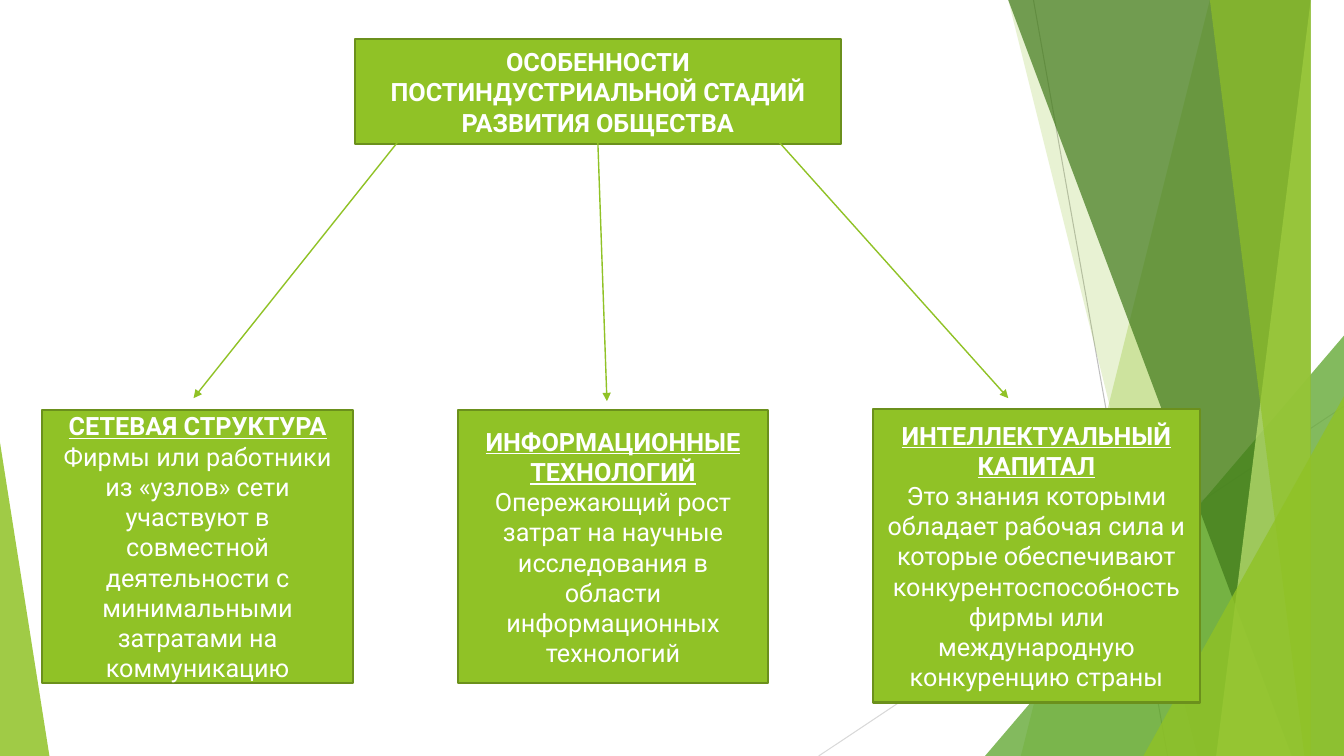
from lxml.etree import SubElement as sub_el
from pptx import Presentation
from pptx.dml.color import RGBColor as Rgb
from pptx.enum.shapes import MSO_CONNECTOR as Conn, MSO_SHAPE as Kind
from pptx.enum.text import MSO_ANCHOR as Anchor, MSO_AUTO_SIZE as Fit, PP_ALIGN as Align
from pptx.oxml.ns import qn
from pptx.util import Inches, Pt

WIDE, HIGH = 13.33, 7.5
GREEN, EDGE, WHITE = "90C226", "6B901C", "FFFFFF"
FONT = "Roboto"

HEAD = "ОСОБЕННОСТИ ПОСТИНДУСТРИАЛЬНОЙ СТАДИЙ РАЗВИТИЯ ОБЩЕСТВА"
HEAD_BOX = (3.52, 0.39, 4.82, 1.04)

# Cards: left edges follow one step
LEFT, STEP = 0.42, 4.12
CARDS = [  # title, text, top, width, height
    ("СЕТЕВАЯ СТРУКТУРА",
     "Фирмы или работники из «узлов» сети участвуют в совместной "
     "деятельности с минимальными затратами на коммуникацию",
     4.07, 3.08, 2.71),
    ("ИНФОРМАЦИОННЫЕ ТЕХНОЛОГИЙ",
     "Опережающий рост затрат на научные исследования в области "
     "информационных технологий",
     4.07, 3.08, 2.71),
    ("ИНТЕЛЛЕКТУАЛЬНЫЙ КАПИТАЛ",
     "Это знания которыми обладает рабочая сила и которые обеспечивают "
     "конкурентоспособность фирмы или международную конкуренцию страны",
     4.06, 3.24, 2.91),
]
ARROWS = [
    ((4.04, 1.29), (1.92, 3.95)),
    ((5.93, 1.42), (6.02, 3.98)),
    ((7.62, 1.29), (10, 3.95)),
]

# Facets: bands are (top x, bottom x) and run to the right edge;
# wedges are (left, top, width, peak)
THREADS = [
    ((10.25, 0), (11.58, HIGH), "BFBFBF"),
    ((WIDE, 4.03), (8.12, HIGH), "D9D9D9"),
]
FACETS = [
    ("band", (12.28, 10.04), GREEN, 30),
    ("band", (10.5, 11.83), GREEN, 20),
    ("wedge", (9.77, 3.33, 3.56, 1), "54A021", 72),
    ("band", (10.21, 12.91), "3F7819", 70),
    ("band", (13.03, 11.92), "C0E474", 70),
    ("band", (11.96, 13.18), GREEN, 65),
    ("wedge", (11.34, 3.93, 1.99, 1), GREEN, 80),
    ("wedge", (0, 4.39, 0.49, 0), GREEN, 85),
]


def tint(color, hue):
    color.rgb = Rgb.from_string(hue)


def paint(shape, hue, alpha=100):
    shape.fill.solid()
    tint(shape.fill.fore_color, hue)
    if alpha < 100:
        clr = shape.fill._xPr.find(qn("a:solidFill"))[0]
        sub_el(clr, qn("a:alpha"), val=str(alpha * 1000))


def draw_line(slide, start, end, hue, width, arrow=False):
    ends = [Inches(v) for v in (*start, *end)]
    line = slide.shapes.add_connector(Conn.STRAIGHT, *ends)
    tint(line.line.color, hue)
    line.line.width = Pt(width)
    if arrow:
        sub_el(line.line._get_or_add_ln(), qn("a:tailEnd"), type="triangle")
    sub_el(line._element.spPr, qn("a:effectLst"))


def draw_band(slide, top, foot):
    pen = slide.shapes.build_freeform(top, 0, scale=Inches(1))
    pen.add_line_segments([(WIDE, 0), (WIDE, HIGH), (foot, HIGH)], close=True)
    return pen.convert_to_shape()


def draw_wedge(slide, left, top, width, peak):
    box = [Inches(v) for v in (left, top, width, HIGH - top)]
    wedge = slide.shapes.add_shape(Kind.ISOSCELES_TRIANGLE, *box)
    wedge.adjustments[0] = peak
    return wedge


def draw_back(slide):
    for start, end, hue in THREADS:
        draw_line(slide, start, end, hue, 0.75)
    makers = {"band": draw_band, "wedge": draw_wedge}
    for kind, dims, hue, alpha in FACETS:
        facet = makers[kind](slide, *dims)
        paint(facet, hue, alpha)
        facet.line.fill.background()
        facet.shadow.inherit = False


def style_box(shape, text):
    """Green panel with centred white text."""
    paint(shape, GREEN)
    tint(shape.line.color, EDGE)
    shape.line.width = Pt(1.5)
    frame = shape.text_frame
    frame.text = text
    frame.word_wrap = True
    frame.auto_size = Fit.NONE
    frame.vertical_anchor = Anchor.MIDDLE
    for para in frame.paragraphs:
        para.alignment = Align.CENTER
        for run in para.runs:
            run.font.name = FONT
            run.font.size = Pt(18)
            tint(run.font.color, WHITE)
    frame.paragraphs[0].runs[0].font.bold = True


def draw_head(slide, box):
    head = slide.shapes.title
    head.left, head.top, head.width, head.height = [Inches(v) for v in box]
    style_box(head, HEAD)


def draw_card(slide, box, title, text):
    card = slide.shapes.add_shape(Kind.RECTANGLE, *[Inches(v) for v in box])
    card.shadow.inherit = False
    style_box(card, f"{title}\n{text}")
    card.text_frame.paragraphs[0].runs[0].font.underline = True


def main():
    deck = Presentation()
    deck.slide_width, deck.slide_height = Inches(WIDE), Inches(HIGH)
    slide = deck.slides.add_slide(deck.slide_layouts[5])
    draw_back(slide)
    draw_head(slide, HEAD_BOX)
    for col, (title, text, top, width, height) in enumerate(CARDS):
        draw_card(slide, (LEFT + col * STEP, top, width, height), title, text)
    for start, end in ARROWS:
        draw_line(slide, start, end, GREEN, 1, arrow=True)
    deck.save("out.pptx")


if __name__ == "__main__":
    main()
